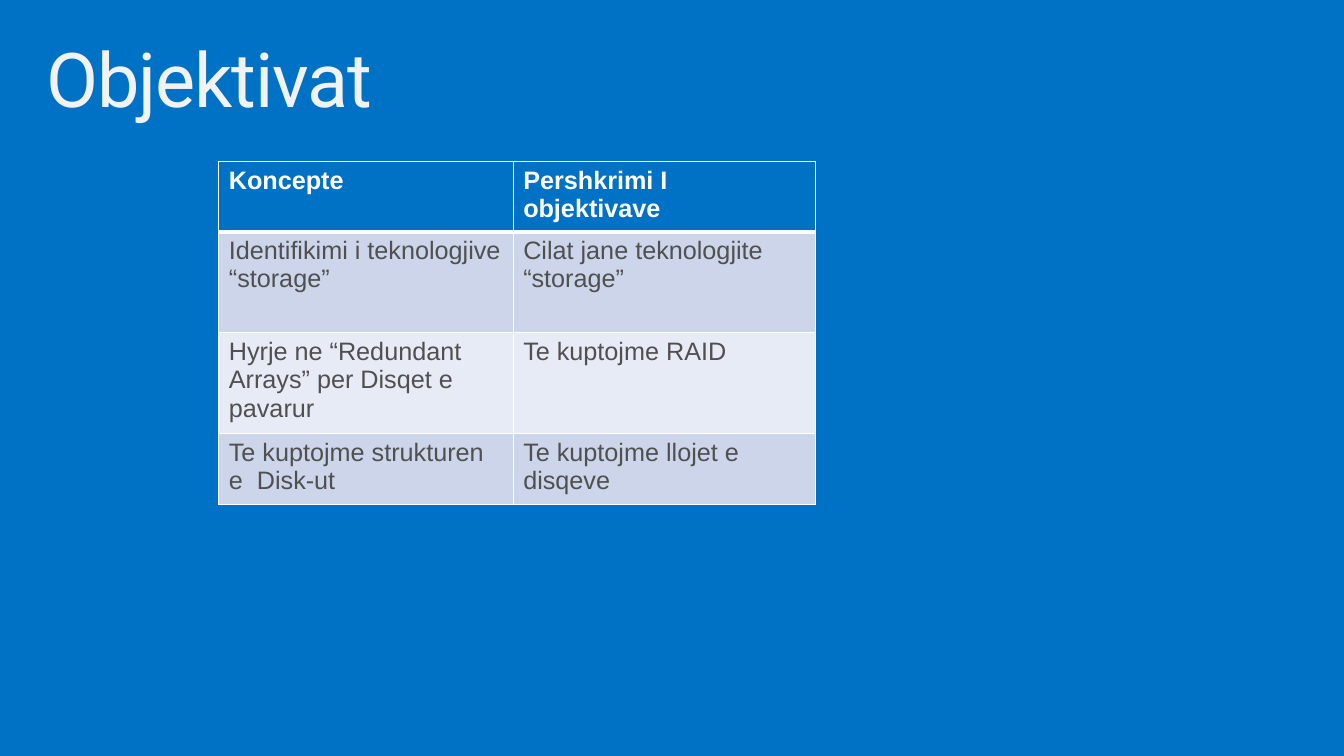
from lxml.etree import SubElement
from pptx import Presentation
from pptx.dml.color import RGBColor
from pptx.enum.text import MSO_ANCHOR
from pptx.oxml.ns import qn
from pptx.util import Inches, Pt

TITLE = "Objektivat"
ROWS = [
    ("Koncepte", "Pershkrimi I objektivave"),
    ("Identifikimi i teknologjive “storage”", "Cilat jane teknologjite “storage”"),
    ("Hyrje ne “Redundant Arrays” per Disqet e pavarur", "Te kuptojme RAID"),
    ("Te kuptojme strukturen e  Disk-ut", "Te kuptojme llojet e disqeve"),
]
COLUMN_WIDTHS = [2.92, 3]
ROW_HEIGHTS = [0.7, 1, 1, 0.7]
TABLE_LEFT, TABLE_TOP = 2.17, 1.6

THEME = {
    "blue": "0072C6",
    "title": "F2F2F2",
    "white": "FFFFFF",
    "body": "505050",
    "bands": ("CCD5EA", "E7EBF5"),
    "title_font": "Roboto",
    "table_font": "Arial",
    "title_size": 54,
    "table_size": 18,
    "rule": 1,
    "header_rule": 3,
}


def style_font(font, name, size, color, bold=False):
    font.name = name
    font.size = Pt(size)
    font.bold = bold
    font.color.rgb = RGBColor.from_string(color)


def set_borders(cell, widths):
    """Draw white cell edges; widths maps L, R, T, B to points, in that order."""
    properties = cell._tc.get_or_add_tcPr()
    for position, (side, width) in enumerate(widths.items()):
        line = SubElement(properties, qn(f"a:ln{side}"), w=str(Pt(width)))
        fill = SubElement(line, qn("a:solidFill"))
        SubElement(fill, qn("a:srgbClr"), val=THEME["white"])
        properties.insert(position, line)


def add_title(page):
    box = page.shapes.add_textbox(Inches(0.3), Inches(0.32), Inches(12.75), Inches(0.98))
    frame = box.text_frame
    frame.word_wrap = True
    frame.vertical_anchor = MSO_ANCHOR.TOP
    frame.margin_left = frame.margin_right = Inches(0.16)
    frame.margin_top = frame.margin_bottom = Inches(0.1)
    frame.text = TITLE
    para = frame.paragraphs[0]
    para.line_spacing = 0.9
    span = para.runs[0]
    style_font(span.font, THEME["title_font"], THEME["title_size"], THEME["title"])
    span.font._element.set("spc", "-80")


def fill_cell(cell, text, row):
    header = row == 0
    cell.text = text
    cell.margin_left = cell.margin_right = Inches(0.1)
    cell.margin_top = cell.margin_bottom = Inches(0.05)
    cell.fill.solid()
    background = THEME["blue"] if header else THEME["bands"][(row - 1) % 2]
    cell.fill.fore_color.rgb = RGBColor.from_string(background)
    color = THEME["white"] if header else THEME["body"]
    span = cell.text_frame.paragraphs[0].runs[0]
    style_font(span.font, THEME["table_font"], THEME["table_size"], color, header)
    widths = dict.fromkeys("LRTB", THEME["rule"])
    if header:
        widths["B"] = THEME["header_rule"]
    elif row == 1:
        widths["T"] = THEME["header_rule"]
    set_borders(cell, widths)


def add_objectives(page):
    table = page.shapes.add_table(
        len(ROWS), len(COLUMN_WIDTHS), Inches(TABLE_LEFT), Inches(TABLE_TOP),
        Inches(sum(COLUMN_WIDTHS)), Inches(sum(ROW_HEIGHTS)),
    ).table
    for column, width in zip(table.columns, COLUMN_WIDTHS):
        column.width = Inches(width)
    for row, (texts, height) in enumerate(zip(ROWS, ROW_HEIGHTS)):
        table.rows[row].height = Inches(height)
        for column, text in enumerate(texts):
            fill_cell(table.cell(row, column), text, row)


def main():
    deck = Presentation()
    deck.slide_width, deck.slide_height = Inches(13.33), Inches(7.5)
    page = deck.slides.add_slide(deck.slide_layouts[6])
    page.background.fill.solid()
    page.background.fill.fore_color.rgb = RGBColor.from_string(THEME["blue"])
    add_title(page)
    add_objectives(page)
    deck.save("out.pptx")


if __name__ == "__main__":
    main()
